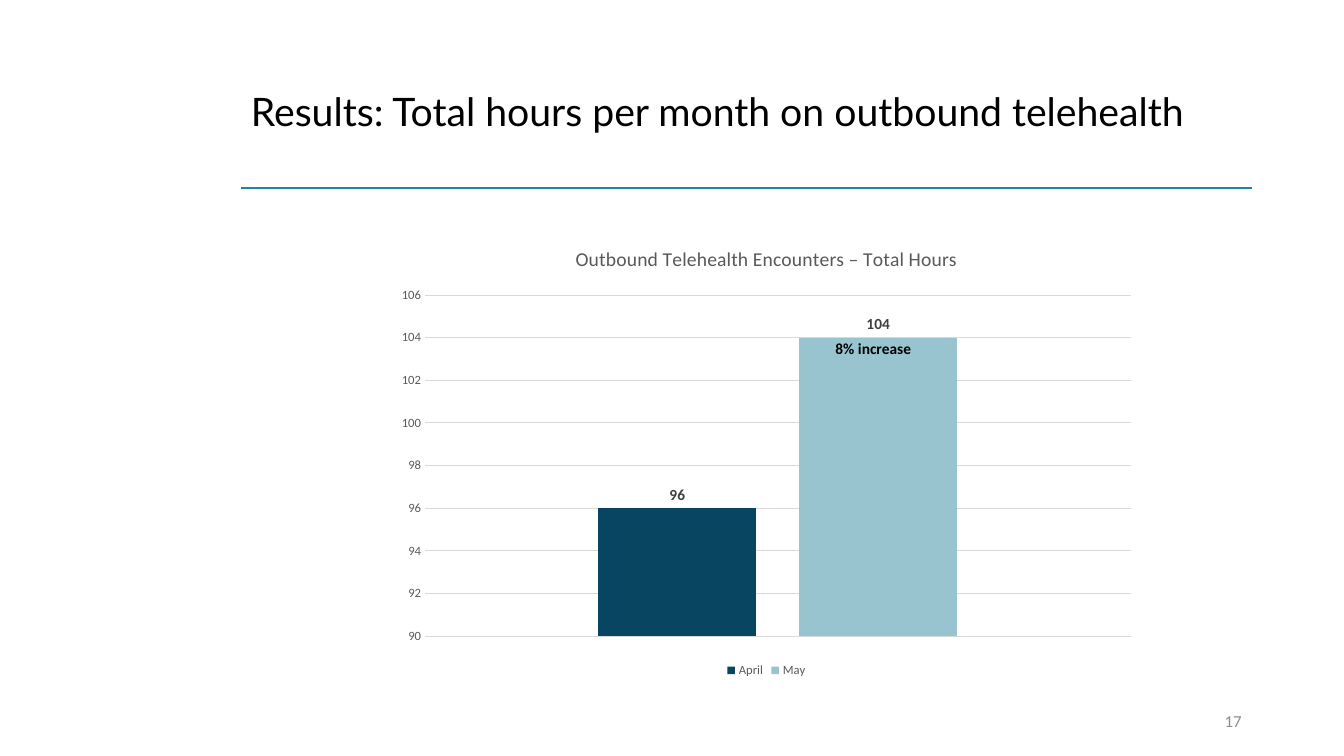
from lxml import etree
from pptx import Presentation
from pptx.chart.data import CategoryChartData
from pptx.dml.color import RGBColor
from pptx.enum.chart import XL_CHART_TYPE, XL_LABEL_POSITION, XL_LEGEND_POSITION, XL_TICK_MARK
from pptx.enum.shapes import MSO_CONNECTOR
from pptx.enum.text import MSO_ANCHOR, PP_ALIGN
from pptx.oxml import parse_xml
from pptx.oxml.ns import nsdecls, qn
from pptx.util import Pt

COLUMN_CLUSTERED = XL_CHART_TYPE.COLUMN_CLUSTERED
OUTSIDE_END = XL_LABEL_POSITION.OUTSIDE_END
LEGEND_BOTTOM = XL_LEGEND_POSITION.BOTTOM
NO_TICKS = XL_TICK_MARK.NONE
STRAIGHT = MSO_CONNECTOR.STRAIGHT
TOP, MIDDLE = MSO_ANCHOR.TOP, MSO_ANCHOR.MIDDLE
LEFT, RIGHT = PP_ALIGN.LEFT, PP_ALIGN.RIGHT

COLORS = {
    "black": "000000",
    "rule": "1A8A99",
    "number": "8C8C8C",
    "axis": "595959",
    "label": "404040",
    "grid": "D9D9D9",
    "April": "084561",
    "May": "98C4D0",
}
MONTHLY_HOURS = {"April": 96, "May": 104}
TITLE_LAYOUT = 5


def color(name):
    return RGBColor.from_string(COLORS[name])


def format_font(font, size, color_name, bold=False, name="Calibri"):
    font.name = name
    font.size = Pt(size)
    font.bold = bold
    font.color.rgb = color(color_name)


def write_text(text_frame, text, size, color_name="black", bold=False, name="Calibri",
               align=LEFT, anchor=TOP, line_spacing=1.0):
    text_frame.word_wrap = True
    text_frame.vertical_anchor = anchor
    paragraph = text_frame.paragraphs[0]
    paragraph.alignment = align
    paragraph.line_spacing = line_spacing
    run = paragraph.add_run()
    run.text = text
    format_font(run.font, size, color_name, bold, name)


def add_text(slide, text, left, top, width, height, **text_format):
    box = slide.shapes.add_textbox(Pt(left), Pt(top), Pt(width), Pt(height))
    write_text(box.text_frame, text, **text_format)


def add_header(slide, left, top, width, height, rule_width):
    """Fill the title placeholder and draw the rule just below it."""
    rule_top = top + height + 1.5
    rule = slide.shapes.add_connector(STRAIGHT, Pt(left), Pt(rule_top),
                                      Pt(left + rule_width), Pt(rule_top))
    rule.line.color.rgb = color("rule")
    rule.line.width = Pt(1.75)
    etree.SubElement(rule._element.spPr, qn("a:effectLst"))

    title = slide.shapes.title
    title.left, title.top, title.width, title.height = Pt(left), Pt(top), Pt(width), Pt(height)
    write_text(title.text_frame, "Results: Total hours per month on outbound telehealth",
               size=28, name="Lato", anchor=MIDDLE, line_spacing=0.9)


def place_plot_area(chart, x, y, width, height):
    """Fix the inner plot area, in fractions of the chart."""
    plot_area = chart._chartSpace.chart.plotArea
    for layout in plot_area.findall(qn("c:layout")):
        plot_area.remove(layout)
    plot_area.insert(0, parse_xml(
        f'<c:layout {nsdecls("c")}><c:manualLayout><c:layoutTarget val="inner"/>'
        '<c:xMode val="edge"/><c:yMode val="edge"/>'
        f'<c:x val="{x}"/><c:y val="{y}"/><c:w val="{width}"/><c:h val="{height}"/>'
        '</c:manualLayout></c:layout>'))


def format_value_axis(axis):
    axis.minimum_scale, axis.maximum_scale, axis.major_unit = 90, 106, 2
    axis.major_tick_mark = axis.minor_tick_mark = NO_TICKS
    axis.tick_labels.number_format = "0"
    axis.tick_labels.number_format_is_linked = False
    format_font(axis.tick_labels.font, 9, "axis")
    axis.format.line.fill.background()
    axis.major_gridlines.format.line.color.rgb = color("grid")
    axis.major_gridlines.format.line.width = Pt(0.75)


def format_series(series):
    series.format.fill.solid()
    series.format.fill.fore_color.rgb = color(series.name)
    labels = series.data_labels
    labels.show_value = True
    labels.number_format = "0"
    labels.number_format_is_linked = False
    labels.position = OUTSIDE_END
    format_font(labels.font, 11, "label", bold=True)


def add_hours_chart(slide, left, top, width, height):
    chart_data = CategoryChartData(number_format="0")
    chart_data.categories = ["1"]
    for month, hours in MONTHLY_HOURS.items():
        chart_data.add_series(month, [hours])
    chart = slide.shapes.add_chart(COLUMN_CLUSTERED, Pt(left), Pt(top),
                                   Pt(width), Pt(height), chart_data).chart
    format_font(chart.font, 10, "black")

    chart.has_title = True
    title_run = chart.chart_title.text_frame.paragraphs[0].add_run()
    title_run.text = "Outbound Telehealth Encounters – Total Hours"
    format_font(title_run.font, 14, "axis")
    chart.chart_title.include_in_layout = False

    chart.has_legend = True
    chart.legend.position = LEGEND_BOTTOM
    chart.legend.include_in_layout = False
    format_font(chart.legend.font, 9, "axis")

    chart.category_axis.visible = False
    format_value_axis(chart.value_axis)
    plot = chart.plots[0]
    plot.vary_by_categories = False
    plot.gap_width, plot.overlap = 219, -27
    for series in plot.series:
        format_series(series)
    place_plot_area(chart, 0.05, 0.15, 0.93, 0.75)

    add_text(slide, "8% increase", left + 313.2, top + 77, 144, 21, size=11, bold=True)


def main():
    presentation = Presentation()
    presentation.slide_width, presentation.slide_height = Pt(960), Pt(540)
    slide = presentation.slides.add_slide(presentation.slide_layouts[TITLE_LAYOUT])
    add_header(slide, 172, 29, 762.5, 104, rule_width=722)
    add_hours_chart(slide, 276.5, 162, 542, 325)
    add_text(slide, "17", 678, 500.5, 216, 28.8, size=12, color_name="number",
             align=RIGHT, anchor=MIDDLE)
    presentation.save("out.pptx")


if __name__ == "__main__":
    main()
